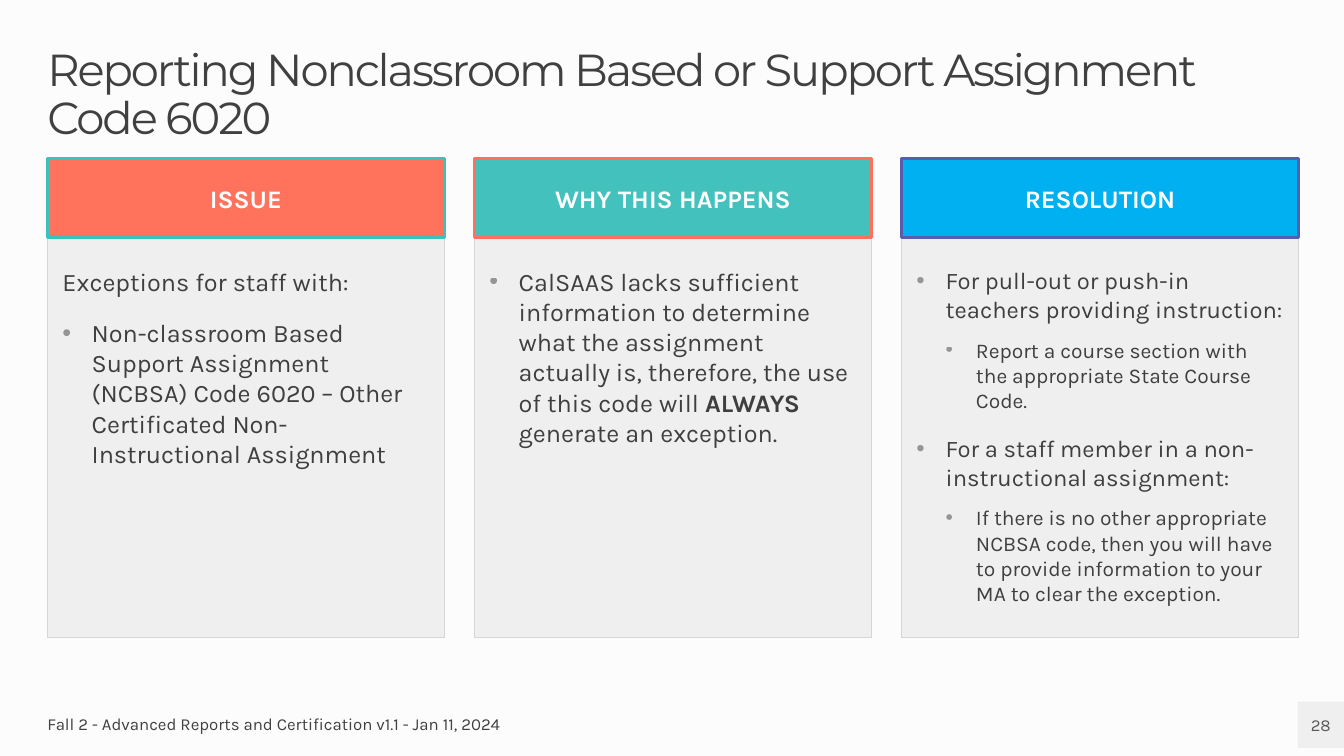
from pptx import Presentation
from pptx.dml.color import RGBColor
from pptx.enum.shapes import MSO_SHAPE as Shape
from pptx.enum.text import MSO_ANCHOR as Anchor, PP_ALIGN as Align
from pptx.oxml import parse_xml
from pptx.oxml.ns import nsdecls
from pptx.util import Inches, Pt

# Content
TITLE = "Reporting Nonclassroom Based or Support Assignment Code 6020"
FOOTER = "Fall 2 - Advanced Reports and Certification v1.1 - Jan 11, 2024"
PAGE = "28"
# Each column: heading, fill, border, paragraphs as (level, size, runs);
# level None has no bullet, and odd runs are bold
COLUMNS = [
    ("ISSUE", "FF735D", "3DC1BD", [
        (None, 18, ["Exceptions for staff with:"]),
        (0, 18, ["Non-classroom Based Support Assignment (NCBSA) Code 6020 – "
                 "Other Certificated Non-Instructional Assignment"]),
    ]),
    ("WHY THIS HAPPENS", "42C1BD", "FF715B", [
        (0, 18, ["CalSAAS lacks sufficient information to determine what the "
                 "assignment actually is, therefore, the use of this code will ",
                 "ALWAYS", " generate an exception."]),
    ]),
    ("RESOLUTION", "00B0F0", "555FAD", [
        (0, 17, ["For pull-out or push-in teachers providing instruction:"]),
        (1, 15, ["Report a course section with the appropriate State Course Code."]),
        (0, 17, ["For a staff member in a non-instructional assignment:"]),
        (1, 15, ["If there is no other appropriate NCBSA code, then you will have "
                 "to provide information to your MA to clear the exception."]),
    ]),
]

THEME = {
    "back": "FCFCFC", "panel": "EFEFEF", "edge": "D6D6D6", "body": "3F3F3F",
    "dark": "404040", "page": "595959",
    "head_font": "Montserrat", "font": "Karla",
    "title": 32, "head": 18, "small": 12,
}
LEFT, TOP, WIDTH, STEP = 0.47, 1.57, 3.94, 4.235
HEAD, PANEL = 0.79, 3.97
INDENTS = [(0.29, 0.29), (0.59, 0.3)]


def rgb(code):
    return RGBColor.from_string(code)


def style(font, size, color, name=THEME["font"], bold=False):
    font.size, font.name, font.bold = Pt(size), name, bold
    font.color.rgb = rgb(color)


def setup(shape, insets=(0, 0, 0, 0), anchor=Anchor.TOP):
    frame = shape.text_frame
    frame.word_wrap = True
    frame.vertical_anchor = anchor
    (frame.margin_left, frame.margin_top,
     frame.margin_right, frame.margin_bottom) = map(Inches, insets)
    return frame


def add_box(slide, at, fill, line=None, width=0):
    box = slide.shapes.add_shape(Shape.RECTANGLE, *map(Inches, at))
    box.shadow.inherit = False
    box.fill.solid()
    box.fill.fore_color.rgb = rgb(fill)
    if line:
        box.line.color.rgb = rgb(line)
        box.line.width = Pt(width)
    else:
        box.line.fill.background()
    return box


def add_label(frame, text, size, color, align=Align.LEFT, **font):
    frame.text = text
    para = frame.paragraphs[0]
    para.alignment = align
    style(para.runs[0].font, size, color, **font)
    return para


def add_bullet(para, level):
    props = para._p.get_or_add_pPr()
    left, hang = INDENTS[level]
    props.set("marL", str(Inches(left)))
    props.set("indent", str(-Inches(hang)))
    ns = nsdecls("a")
    props.append(parse_xml(
        f'<a:buClr {ns}><a:srgbClr val="{THEME["dark"]}">'
        '<a:alpha val="50000"/></a:srgbClr></a:buClr>'))
    props.append(parse_xml(f'<a:buFont {ns} typeface="Arial"/>'))
    props.append(parse_xml(f'<a:buChar {ns} char="•"/>'))


def fill_panel(frame, paras):
    for i, (level, size, runs) in enumerate(paras):
        para = frame.add_paragraph() if i else frame.paragraphs[0]
        para.alignment = Align.LEFT
        para.level = level or 0
        if i:
            para.space_before = Pt(5 if level == 1 else 10)
        para.space_after = Pt(5)
        if level is not None:
            add_bullet(para, level)
        for j, text in enumerate(runs):
            run = para.add_run()
            run.text = text
            style(run.font, size, THEME["body"], bold=j % 2 == 1)


def main():
    deck = Presentation()
    deck.slide_width, deck.slide_height = Inches(13.33), Inches(7.5)
    slide = deck.slides.add_slide(deck.slide_layouts[6])
    slide.background.fill.solid()
    slide.background.fill.fore_color.rgb = rgb(THEME["back"])

    # Title
    box = slide.shapes.add_textbox(*map(Inches, (LEFT, 0.47, 12.4, 0.47)))
    para = add_label(setup(box), TITLE, THEME["title"], THEME["dark"],
                     name=THEME["head_font"])
    para.line_spacing = 0.9
    para.runs[0].font._element.set("spc", "-150")

    # Columns: panel below, heading on top
    for i, (head, fill, line, paras) in enumerate(COLUMNS):
        x = LEFT + i * STEP
        panel = add_box(slide, (x, TOP + HEAD, WIDTH, PANEL),
                        THEME["panel"], THEME["edge"], 0.75)
        fill_panel(setup(panel, (0.15, 0.28, 0.15, 0)), paras)
        bar = add_box(slide, (x, TOP, WIDTH, HEAD), fill, line, 2.25)
        frame = setup(bar, (0.12, 0.04, 0.12, 0.04), Anchor.MIDDLE)
        add_label(frame, head, THEME["head"], THEME["back"], Align.CENTER, bold=True)

    # Footer and page number
    box = slide.shapes.add_textbox(*map(Inches, (LEFT, 6.96, 5.98, 0.45)))
    add_label(setup(box, anchor=Anchor.MIDDLE), FOOTER, THEME["small"], THEME["dark"])
    box = add_box(slide, (12.87, 6.96, 0.46, 0.46), THEME["panel"])
    add_label(setup(box, anchor=Anchor.MIDDLE), PAGE, THEME["small"],
              THEME["page"], Align.CENTER)

    deck.save("out.pptx")


if __name__ == "__main__":
    main()
